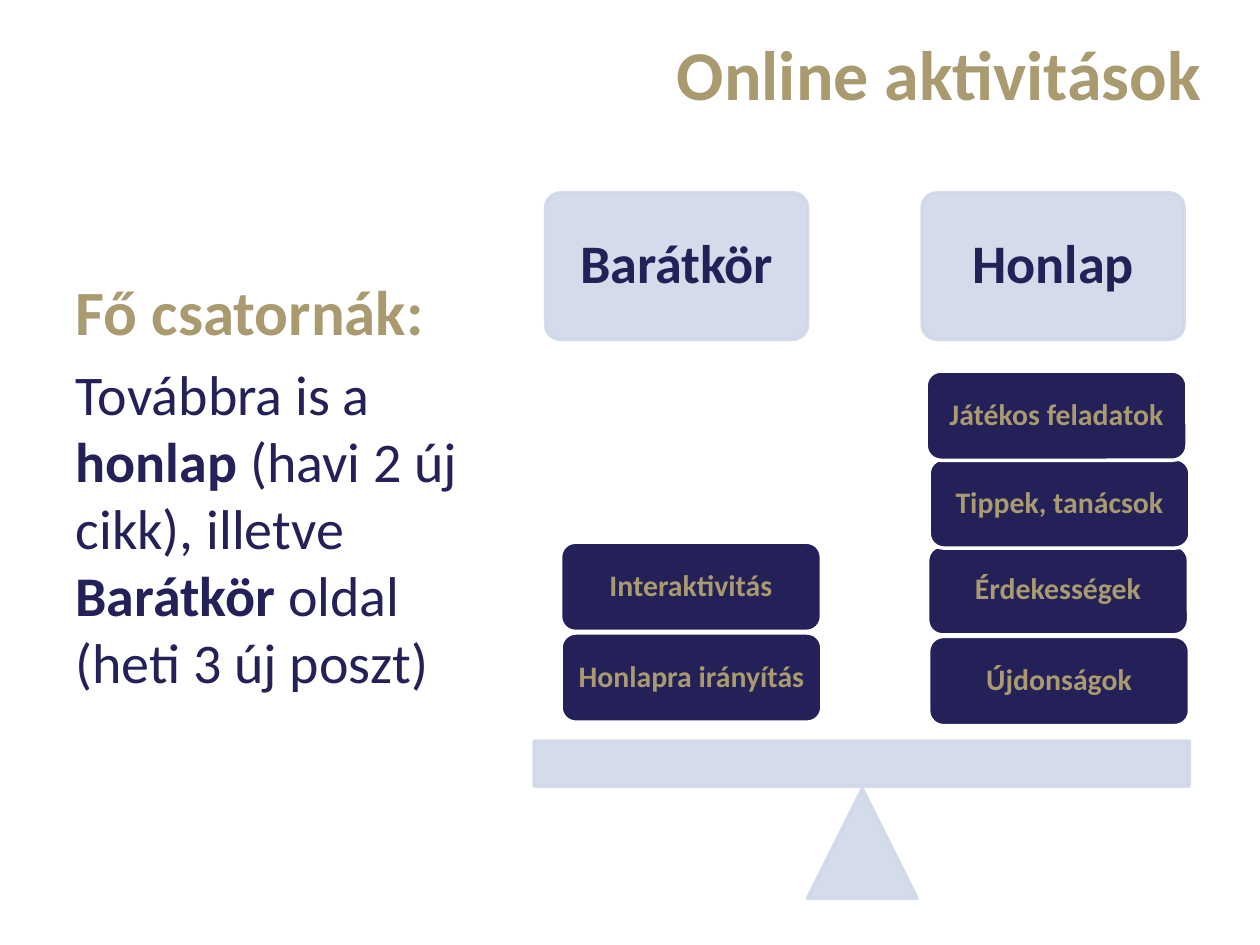
from lxml.etree import SubElement
from pptx import Presentation
from pptx.dml.color import RGBColor
from pptx.enum.shapes import MSO_SHAPE as Kind
from pptx.enum.text import MSO_ANCHOR as Anchor, MSO_AUTO_SIZE as Fit, PP_ALIGN as Align
from pptx.oxml.ns import qn
from pptx.util import Cm, Pt

NAVY, GOLD, PALE, WHITE = "232157", "A99A6F", "D0D8E8", "FFFFFF"


def paint(fill, tone, alpha=None):
    """Give a fill a solid colour, with opacity in percent if wanted."""
    fill.solid()
    fill.fore_color.rgb = RGBColor.from_string(tone)
    if alpha:
        node = fill._xPr.find(qn("a:solidFill"))[0]
        SubElement(node, qn("a:alpha")).set("val", str(alpha * 1000))


def write(para, text, size, tone, bold=False, align=None):
    """Add one run to a paragraph."""
    run = para.add_run()
    run.text = text
    run.font.name = "Calibri"
    run.font.size = Pt(size)
    run.font.bold = bold
    paint(run.font.fill, tone)
    if align is not None:
        para.alignment = align


class Page:
    """The current slide and its style."""

    def __init__(self, deck):
        self.slide = deck.slides.add_slide(deck.slide_layouts[1])
        paint(self.slide.background.fill, WHITE)

    def place(self, index, box, anchor):
        """Move a placeholder and return its text frame."""
        holder = self.slide.placeholders[index]
        holder.left, holder.top, holder.width, holder.height = map(Cm, box)
        frame = holder.text_frame
        frame.auto_size = Fit.NONE
        frame.word_wrap = True
        frame.vertical_anchor = anchor
        return frame

    def title(self, text, box):
        frame = self.place(0, box, Anchor.MIDDLE)
        write(frame.paragraphs[0], text, 40, GOLD, True, Align.RIGHT)

    def body(self, head, parts, box):
        frame = self.place(1, box, Anchor.TOP)
        first, second = frame.paragraphs[0], frame.add_paragraph()
        for para, gap in ((first, 0), (second, 6.4)):
            props = para._p.get_or_add_pPr()
            props.set("marL", "0")
            props.set("indent", "0")
            SubElement(props, qn("a:buNone"))
            para.space_before = Pt(gap)
        write(first, head, 36, GOLD, True)
        for text, bold in parts:
            write(second, text, 32, NAVY, bold)

    def shape(self, kind, box, fill=PALE, line=PALE, alpha=90):
        item = self.slide.shapes.add_shape(kind, *map(Cm, box))
        item.shadow.inherit = False
        paint(item.fill, fill, alpha)
        paint(item.line.fill, line, alpha)
        item.line.width = Pt(2)
        return item

    def label(self, item, text, size, tone, inset):
        frame = item.text_frame
        frame.word_wrap = True
        frame.vertical_anchor = Anchor.MIDDLE
        frame.margin_left = frame.margin_right = Cm(inset)
        frame.margin_top = frame.margin_bottom = Cm(inset)
        para = frame.paragraphs[0]
        para.line_spacing = 0.9
        write(para, text, size, tone, True, Align.CENTER)

    def panel(self, text, left):
        item = self.shape(Kind.ROUNDED_RECTANGLE, (left, 3.89, 5.28, 2.95))
        item.adjustments[0] = 0.1
        self.label(item, text, 31, NAVY, 0.4)

    def tile(self, text, left, top):
        box = (left, top, 5.26, 1.8)
        item = self.shape(Kind.ROUNDED_RECTANGLE, box, NAVY, WHITE, None)
        self.label(item, text, 17, GOLD, 0.26)


def main():
    deck = Presentation()
    deck.slide_width, deck.slide_height = Cm(25.4), Cm(19.05)
    page = Page(deck)

    # Title and text
    page.title("Online aktivitások", (7.04, 0, 17.42, 2.92))
    parts = [("Továbbra is a ", False), ("honlap ", True),
             ("(havi 2 új cikk), illetve ", False), ("Barátkör", True),
             (" oldal (heti 3 új poszt)", False)]
    page.body("Fő csatornák:", parts, (1.27, 5.36, 8.64, 10.13))

    # Channel heads
    for text, left in (("Barátkör", 11), ("Honlap", 18.59)):
        page.panel(text, left)

    # Scale
    page.shape(Kind.ISOSCELES_TRIANGLE, (16.28, 15.9, 2.21, 2.21))
    page.shape(Kind.RECTANGLE, (10.77, 14.94, 13.21, 0.91))

    # Weights, from the bottom up
    tiles = [("Újdonságok", 18.72, 12.83), ("Érdekességek", 18.7, 11),
             ("Tippek, tanácsok", 18.73, 9.25), ("Játékos feladatok", 18.67, 7.48),
             ("Honlapra irányítás", 11.31, 12.76), ("Interaktivitás", 11.3, 10.93)]
    for text, left, top in tiles:
        page.tile(text, left, top)

    deck.save("out.pptx")


if __name__ == "__main__":
    main()
